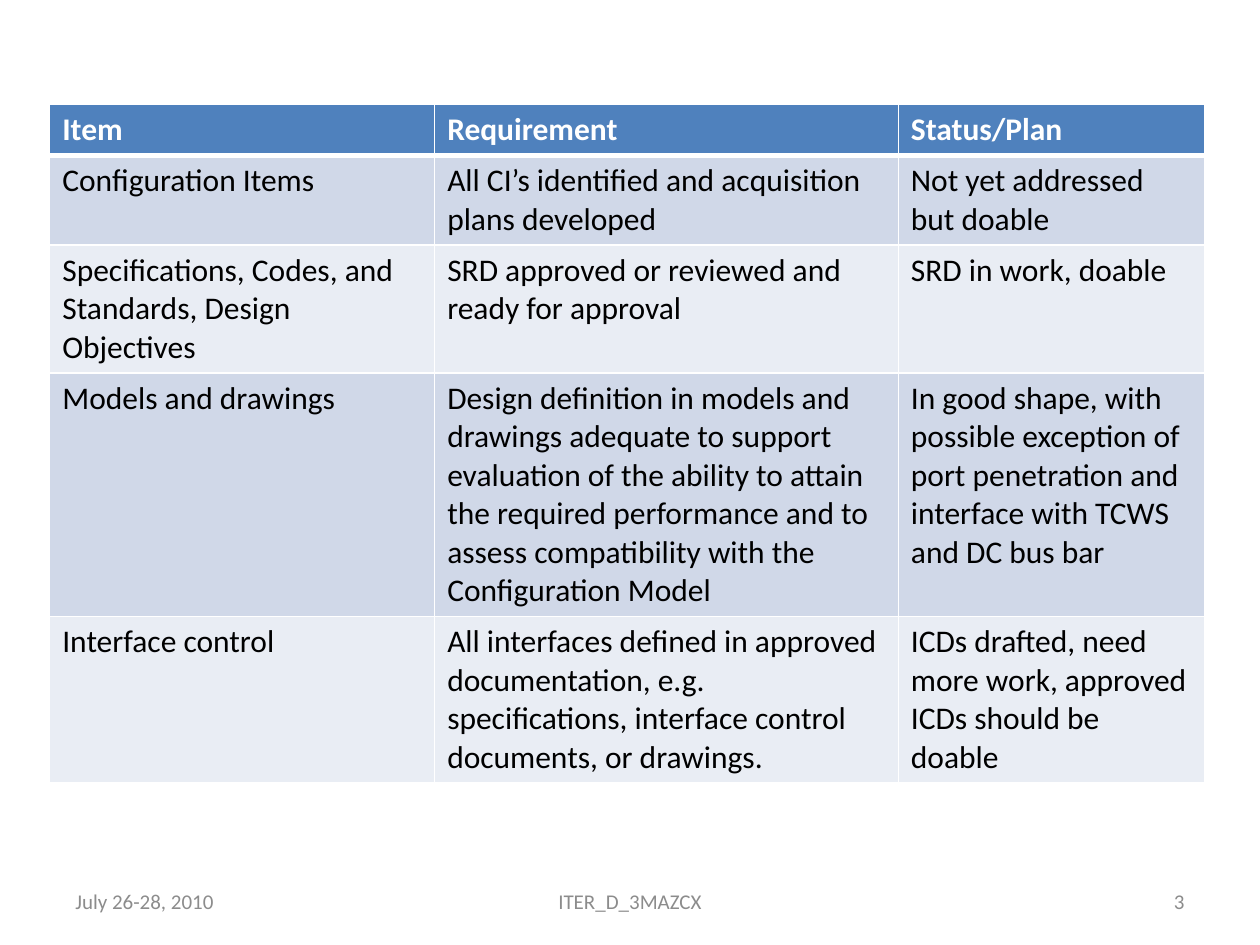
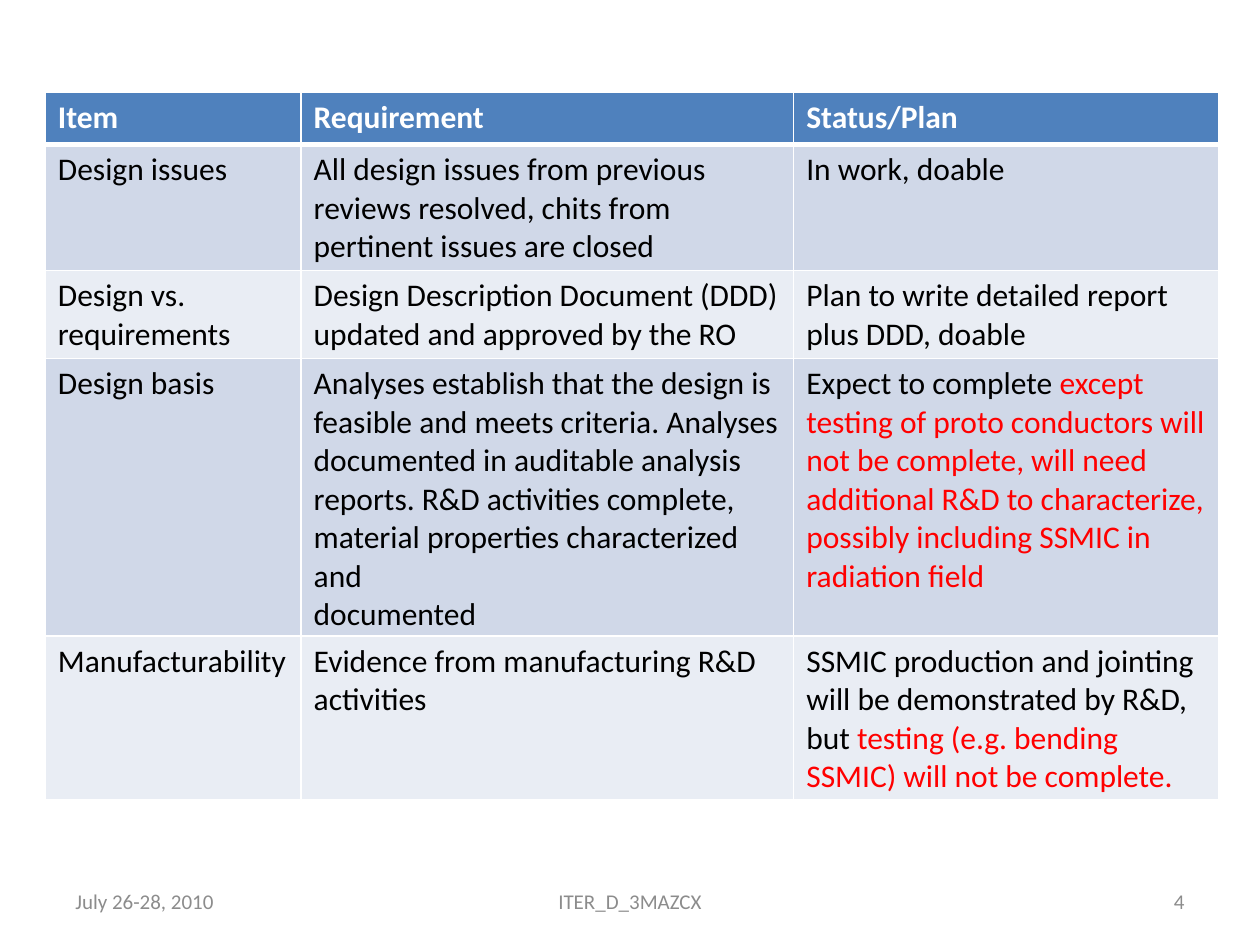
"""Build two slides of design review requirements with their status and plan."""
import lxml.etree
import pptx
import pptx.dml.color
import pptx.enum.text
import pptx.oxml.ns
import pptx.util

RGBColor = pptx.dml.color.RGBColor
WHITE = RGBColor(0xFF, 0xFF, 0xFF)
BLACK = RGBColor(0x00, 0x00, 0x00)
RED = RGBColor(0xFF, 0x00, 0x00)
GRAY = RGBColor(0x8C, 0x8C, 0x8C)
HEADER_BLUE = RGBColor(0x4F, 0x81, 0xBD)
BAND_FILLS = [RGBColor(0xE9, 0xED, 0xF4), RGBColor(0xD0, 0xD8, 0xE8)]

ALIGN = pptx.enum.text.PP_ALIGN
BODY = {"name": "Calibri", "size": pptx.util.Pt(18), "bold": False}
HEADER = BODY | {"bold": True}
FOOTER = BODY | {"size": pptx.util.Pt(12)}

deck = pptx.Presentation()
deck.slide_width = pptx.util.Inches(10)
deck.slide_height = pptx.util.Inches(7.5)
COLUMN = deck.slide_width / 100
ROW = deck.slide_height / 100
LINE_ROWS = 5.47

HEADINGS = ["Item", "Requirement", "Status/Plan"]
REVIEWS = [
    {
        "number": "3", "left": 3.95, "top": 11, "height": 70.8,
        "columns": [30.55, 36.8, 24.3],
        "rows": [
            ["Configuration Items",
             "All CI’s identified and acquisition plans developed",
             "Not yet addressed but doable"],
            ["Specifications, Codes, and Standards, Design Objectives",
             "SRD approved or reviewed and ready for approval",
             "SRD in work, doable"],
            ["Models and drawings",
             "Design definition in models and drawings adequate to support "
             "evaluation of the ability to attain the required performance and "
             "to assess compatibility with the Configuration Model",
             "In good shape, with possible exception of port penetration and "
             "interface with TCWS and DC bus bar"],
            ["Interface control",
             "All interfaces defined in approved documentation, e.g. "
             "specifications, interface control\ndocuments, or drawings.",
             "ICDs drafted, need more work, approved ICDs should be doable"],
        ],
    },
    {
        "number": "4", "left": 3.6, "top": 9.8, "height": 74.8,
        "columns": [20.3, 39.1, 33.75],
        "rows": [
            ["Design issues",
             "All design issues from previous reviews resolved, chits from "
             "pertinent issues are closed",
             "In work, doable"],
            ["Design vs. requirements",
             "Design Description Document (DDD) updated and approved by the RO",
             "Plan to write detailed report plus DDD, doable"],
            ["Design basis",
             "Analyses establish that the design is feasible and meets criteria. "
             "Analyses documented in auditable analysis reports. R&D activities "
             "complete, material properties characterized and\ndocumented",
             "Expect to complete |except testing of proto conductors will not be "
             "complete, will need additional R&D to characterize, possibly "
             "including SSMIC in radiation field"],
            ["Manufacturability",
             "Evidence from manufacturing R&D activities",
             "SSMIC production and jointing will be demonstrated by R&D, but "
             "|testing (e.g. bending SSMIC) will not be complete."],
        ],
    },
]


def write(frame, text, font_format, color, align=ALIGN.LEFT):
    """Fill a text frame; newlines part paragraphs, a bar starts the red warning."""
    for index, line in enumerate(text.split("\n")):
        paragraph = frame.add_paragraph() if index else frame.paragraphs[0]
        paragraph.alignment = align
        statement, _, warning = line.partition("|")
        for words, ink in [(statement, color), (warning, RED)]:
            if words:
                run = paragraph.add_run()
                run.text = words
                for attribute, value in font_format.items():
                    setattr(run.font, attribute, value)
                run.font.color.rgb = ink


def draw_borders(cell, bottom_points):
    """Give a cell white borders, with its own weight at the bottom."""
    properties = cell._tc.get_or_add_tcPr()
    qn = pptx.oxml.ns.qn
    for side, points in [("L", 1), ("R", 1), ("T", 1), ("B", bottom_points)]:
        border = lxml.etree.SubElement(
            properties, qn(f"a:ln{side}"), w=str(pptx.util.Pt(points)))
        fill = lxml.etree.SubElement(border, qn("a:solidFill"))
        lxml.etree.SubElement(fill, qn("a:srgbClr"), val=str(WHITE))


for review in REVIEWS:
    slide = deck.slides.add_slide(deck.slide_layouts[6])
    contents = [HEADINGS] + review["rows"]
    table_frame = slide.shapes.add_table(
        len(contents), len(HEADINGS),
        round(review["left"] * COLUMN), round(review["top"] * ROW),
        round(sum(review["columns"]) * COLUMN), round(review["height"] * ROW))
    table = table_frame.table
    for column, share in zip(table.columns, review["columns"]):
        column.width = round(share * COLUMN)
    for row_index, texts in enumerate(contents):
        is_header = row_index == 0
        table.rows[row_index].height = round(LINE_ROWS * ROW)
        for column_index, text in enumerate(texts):
            cell = table.cell(row_index, column_index)
            draw_borders(cell, 3 if is_header else 1)
            cell.fill.solid()
            cell.fill.fore_color.rgb = HEADER_BLUE if is_header else BAND_FILLS[row_index % 2]
            write(cell.text_frame, text, HEADER if is_header else BODY,
                  WHITE if is_header else BLACK)
    table_frame.height = round(review["height"] * ROW)

    for text, left, width, align in [
        ("July 26-28, 2010", 5, 23.33, ALIGN.LEFT),
        ("ITER_D_3MAZCX", 34.17, 31.67, ALIGN.CENTER),
        (review["number"], 71.67, 23.33, ALIGN.RIGHT),
    ]:
        footer = slide.shapes.add_textbox(
            round(left * COLUMN), round(92.67 * ROW),
            round(width * COLUMN), round(5.33 * ROW)).text_frame
        footer.word_wrap = True
        footer.vertical_anchor = pptx.enum.text.MSO_ANCHOR.MIDDLE
        write(footer, text, FOOTER, GRAY, align)

deck.save("out.pptx")
